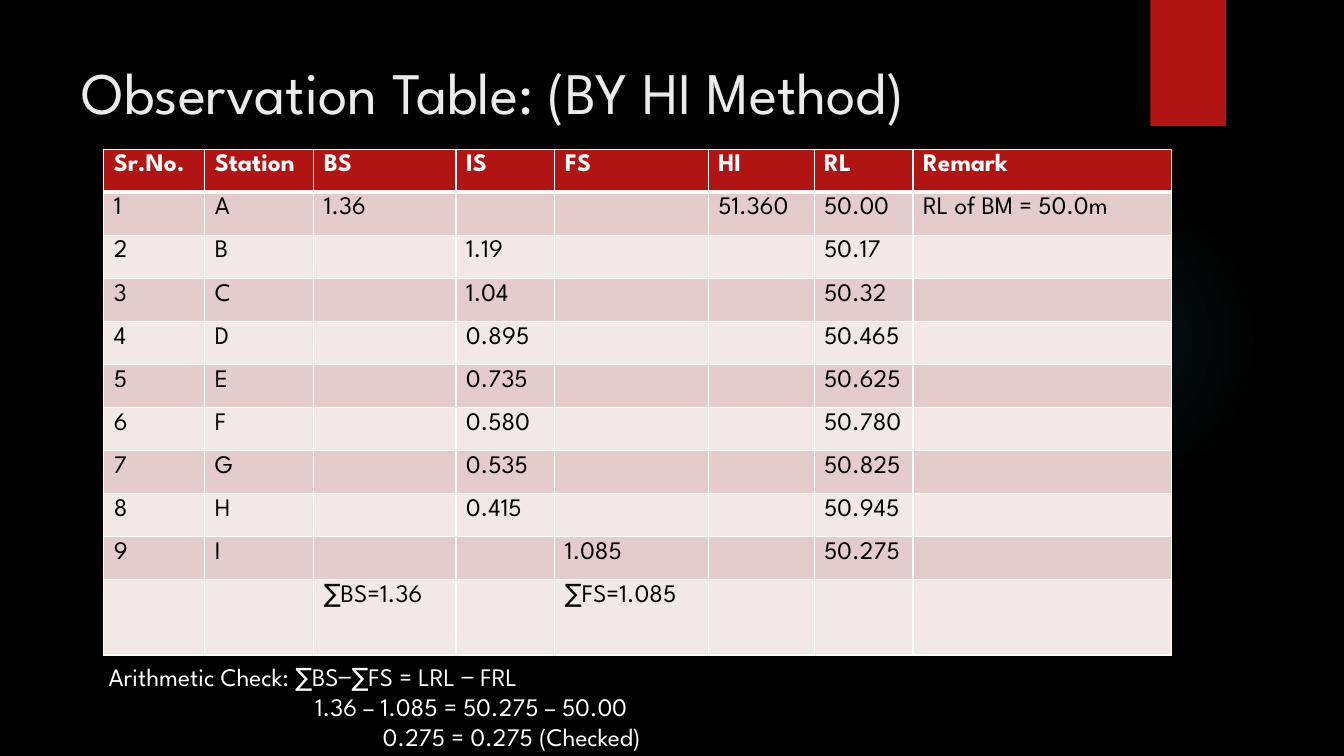
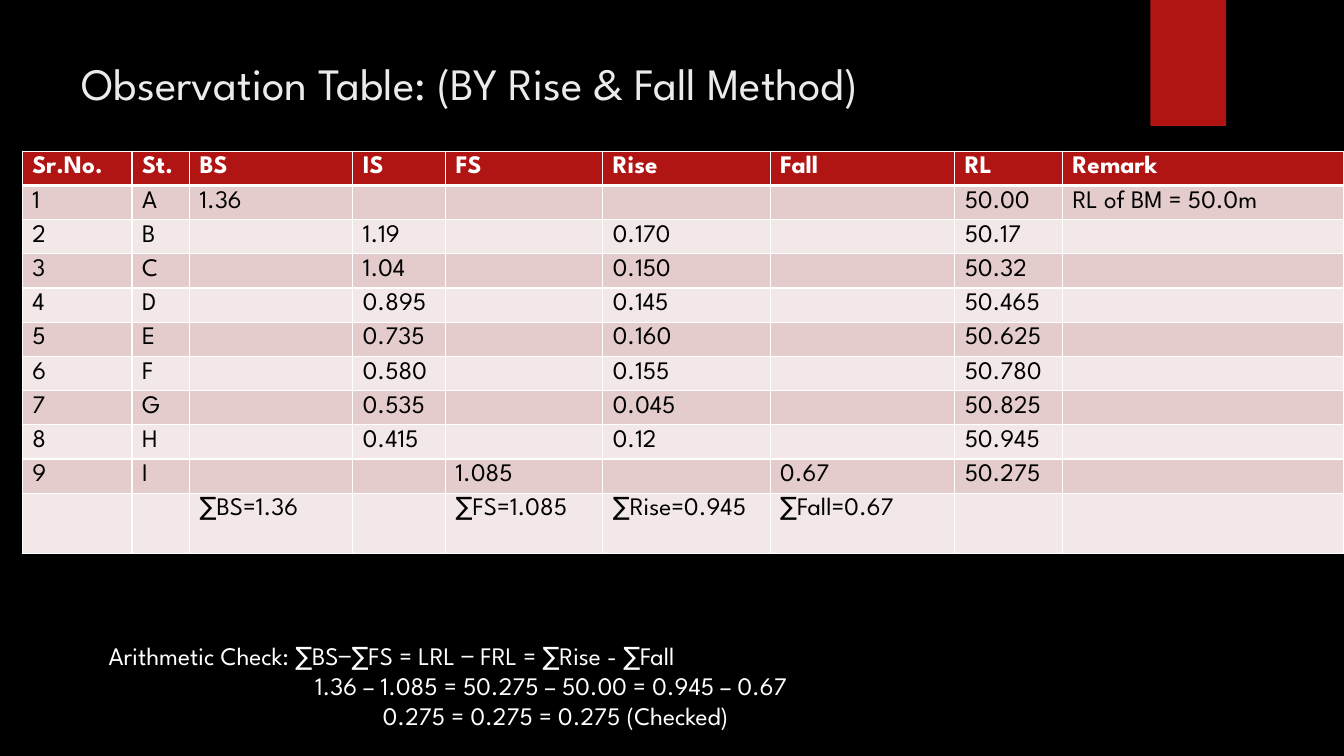
from pptx import Presentation
from pptx import util as u
from pptx.dml.color import RGBColor
from pptx.enum import shapes, text
from pptx.oxml import parse_xml
from pptx.oxml.ns import nsdecls

FONT = "League Spartan"
BLACK = RGBColor(0x00, 0x00, 0x00)
WHITE = RGBColor(0xFF, 0xFF, 0xFF)
TITLE_GREY = RGBColor(0xEB, 0xEB, 0xEB)
RED = RGBColor(0xB0, 0x15, 0x13)
ROSE = RGBColor(0xE4, 0xCC, 0xCC)
PALE_ROSE = RGBColor(0xF2, 0xE8, 0xE7)
TEAL = RGBColor(0x50, 0xB9, 0xC1)

WIDTH, HEIGHT = u.Inches(13.33), u.Inches(7.5)
BODY_SIZE = 18
TOTALS_ROW_SHARE = 1.75
CHECK_INDENTS = (0, 15.35, 20.4)

GLOW_BOX = (70.6, 24.4, 23.1, 41.07)
BAND_BOX = (85.6, 0, 5.63, 16.67)
TITLE_BOX = (5.33, 6.67, 77.18, 20.4)

READINGS = [
    ("A", "1.36", "", "", "50.00"),
    ("B", "", "1.19", "", "50.17"),
    ("C", "", "1.04", "", "50.32"),
    ("D", "", "0.895", "", "50.465"),
    ("E", "", "0.735", "", "50.625"),
    ("F", "", "0.580", "", "50.780"),
    ("G", "", "0.535", "", "50.825"),
    ("H", "", "0.415", "", "50.945"),
    ("I", "", "", "1.085", "50.275"),
]
RISES = ["", "0.170", "0.150", "0.145", "0.160", "0.155", "0.045", "0.12", ""]

HI_METHOD = {
    "title": "Observation Table: (BY HI Method)",
    "title_size": 42,
    "table_box": (7.73, 19.73, 79.43, 66.93),
    "columns": (1, 1.08, 1.41, 0.98, 1.52, 1.05, 0.98, 2.56),
    "station_head": "Station",
    "extra_heads": ["HI"],
    "extras": [["51.360"]] + [[""]] * 8,
    "extra_totals": [""],
    "check_box": (7.35, 86.8, 79.73, 13.2),
    "check": [
        "Arithmetic Check: ∑BS−∑FS = LRL − FRL",
        "1.36 – 1.085 = 50.275 – 50.00",
        "0.275 = 0.275 (Checked)",
    ],
}
RISE_FALL_METHOD = {
    "title": "Observation Table: (BY Rise & Fall Method)",
    "title_size": 32,
    "table_box": (1.65, 20, 98.35, 53.2),
    "columns": (1.09, 0.57, 1.62, 0.92, 1.56, 1.66, 1.83, 1.07, 2.79),
    "station_head": "St.",
    "extra_heads": ["Rise", "Fall"],
    "extras": [[rise, ""] for rise in RISES[:-1]] + [["", "0.67"]],
    "extra_totals": ["∑Rise=0.945", "∑Fall=0.67"],
    "check_box": (7.35, 84, 79.73, 13.47),
    "check": [
        "Arithmetic Check: ∑BS−∑FS = LRL − FRL = ∑Rise - ∑Fall",
        "1.36 – 1.085 = 50.275 – 50.00 = 0.945 – 0.67",
        "0.275 = 0.275 = 0.275 (Checked)",
    ],
}


def place(box):
    """Turn a box in percent of the slide into left, top, width and height."""
    sides = (WIDTH, HEIGHT, WIDTH, HEIGHT)
    return [round(side * share / 100) for side, share in zip(sides, box)]


def style(para, size, color, bold=False):
    """Set the font of a paragraph."""
    font = para.font
    font.name, font.size, font.bold = FONT, u.Pt(size), bold
    font.color.rgb = color


def add_decor(page):
    """Draw the soft glow and the red band."""
    glow = page.shapes.add_shape(shapes.MSO_SHAPE.OVAL, *place(GLOW_BOX))
    band = page.shapes.add_shape(shapes.MSO_SHAPE.RECTANGLE, *place(BAND_BOX))
    for shape in (glow, band):
        shape.shadow.inherit = False
        shape.line.fill.background()
    band.fill.solid()
    band.fill.fore_color.rgb = RED
    stops = "".join(
        f'<a:gs pos="{pos * 1000}"><a:srgbClr val="{TEAL}">'
        f'<a:alpha val="{alpha * 1000}"/></a:srgbClr></a:gs>'
        for pos, alpha in ((0, 7), (36, 6), (69, 0), (100, 0)))
    glow.fill.background()
    properties = glow.element.spPr
    empty_fill = properties.find("{*}noFill")
    properties.replace(empty_fill, parse_xml(
        f'<a:gradFill {nsdecls("a")}><a:gsLst>{stops}</a:gsLst>'
        '<a:path path="circle"><a:fillToRect l="50000" t="50000" r="50000" b="50000"/>'
        '</a:path></a:gradFill>'))


def set_title(page, wording, size):
    """Move and format the title placeholder."""
    title = page.shapes.title
    title.left, title.top, title.width, title.height = place(TITLE_BOX)
    frame = title.text_frame
    frame.text = wording
    frame.word_wrap = True
    frame.auto_size = text.MSO_AUTO_SIZE.NONE
    frame.vertical_anchor = text.MSO_ANCHOR.TOP
    para = frame.paragraphs[0]
    para.alignment = text.PP_ALIGN.LEFT
    style(para, size, TITLE_GREY)


def table_rows(method):
    """Join the shared readings with the columns of one method."""
    rows = [["Sr.No.", method["station_head"], "BS", "IS", "FS",
             *method["extra_heads"], "RL", "Remark"]]
    for number, (reading, extras) in enumerate(zip(READINGS, method["extras"]), 1):
        *sights, level = reading
        remark = "RL of BM = 50.0m" if number == 1 else ""
        rows.append([str(number), *sights, *extras, level, remark])
    rows.append(["", "", "∑BS=1.36", "", "∑FS=1.085", *method["extra_totals"], "", ""])
    return rows


def fill_cell(cell, wording, fill, color, is_head):
    """Write one cell and set its borders, fill and font."""
    properties = cell._tc.get_or_add_tcPr()
    for side in "LRTB":
        points = 3 if is_head and side == "B" else 1
        properties.append(parse_xml(
            f'<a:ln{side} {nsdecls("a")} w="{u.Pt(points)}"><a:solidFill>'
            f'<a:srgbClr val="{WHITE}"/></a:solidFill></a:ln{side}>'))
    cell.fill.solid()
    cell.fill.fore_color.rgb = fill
    para = cell.text_frame.paragraphs[0]
    if wording:
        para.text = wording
    style(para, BODY_SIZE, color, is_head)
    if not wording:
        para._p.append(parse_xml(
            f'<a:endParaRPr {nsdecls("a")} sz="{BODY_SIZE * 100}">'
            f'<a:latin typeface="{FONT}"/></a:endParaRPr>'))


def add_observations(page, box, columns, rows):
    """Draw the observation table in its box."""
    left, top, width, height = place(box)
    table = page.shapes.add_table(
        len(rows), len(columns), left, top, width, height).table
    for column, share in zip(table.columns, columns):
        column.width = round(width * share / sum(columns))
    row_height = height / (len(rows) - 1 + TOTALS_ROW_SHARE)
    for index, (row, wordings) in enumerate(zip(table.rows, rows)):
        is_head = index == 0
        is_totals = index == len(rows) - 1
        row.height = round(row_height * (TOTALS_ROW_SHARE if is_totals else 1))
        fill = RED if is_head else (ROSE if index % 2 else PALE_ROSE)
        for cell, wording in zip(row.cells, wordings):
            fill_cell(cell, wording, fill, WHITE if is_head else BLACK, is_head)


def add_check(page, box, lines):
    """Write the arithmetic check with its stepped indents."""
    frame = page.shapes.add_textbox(*place(box)).text_frame
    frame.word_wrap = True
    for index, (line, indent) in enumerate(zip(lines, CHECK_INDENTS)):
        para = frame.add_paragraph() if index else frame.paragraphs[0]
        para.text = line
        para.line_spacing = u.Pt(21.5)
        para._p.get_or_add_pPr().set("marL", str(round(WIDTH * indent / 100)))
        style(para, BODY_SIZE, WHITE)


def add_method_slide(deck, method):
    """Build the slide of one levelling method."""
    page = deck.slides.add_slide(deck.slide_layouts[5])
    add_decor(page)
    set_title(page, method["title"], method["title_size"])
    add_observations(page, method["table_box"], method["columns"], table_rows(method))
    add_check(page, method["check_box"], method["check"])


def main():
    """Build and save the deck."""
    deck = Presentation()
    deck.slide_width, deck.slide_height = WIDTH, HEIGHT
    background = deck.slide_master.background.fill
    background.solid()
    background.fore_color.rgb = BLACK
    for method in (HI_METHOD, RISE_FALL_METHOD):
        add_method_slide(deck, method)
    deck.save("out.pptx")


if __name__ == "__main__":
    main()
